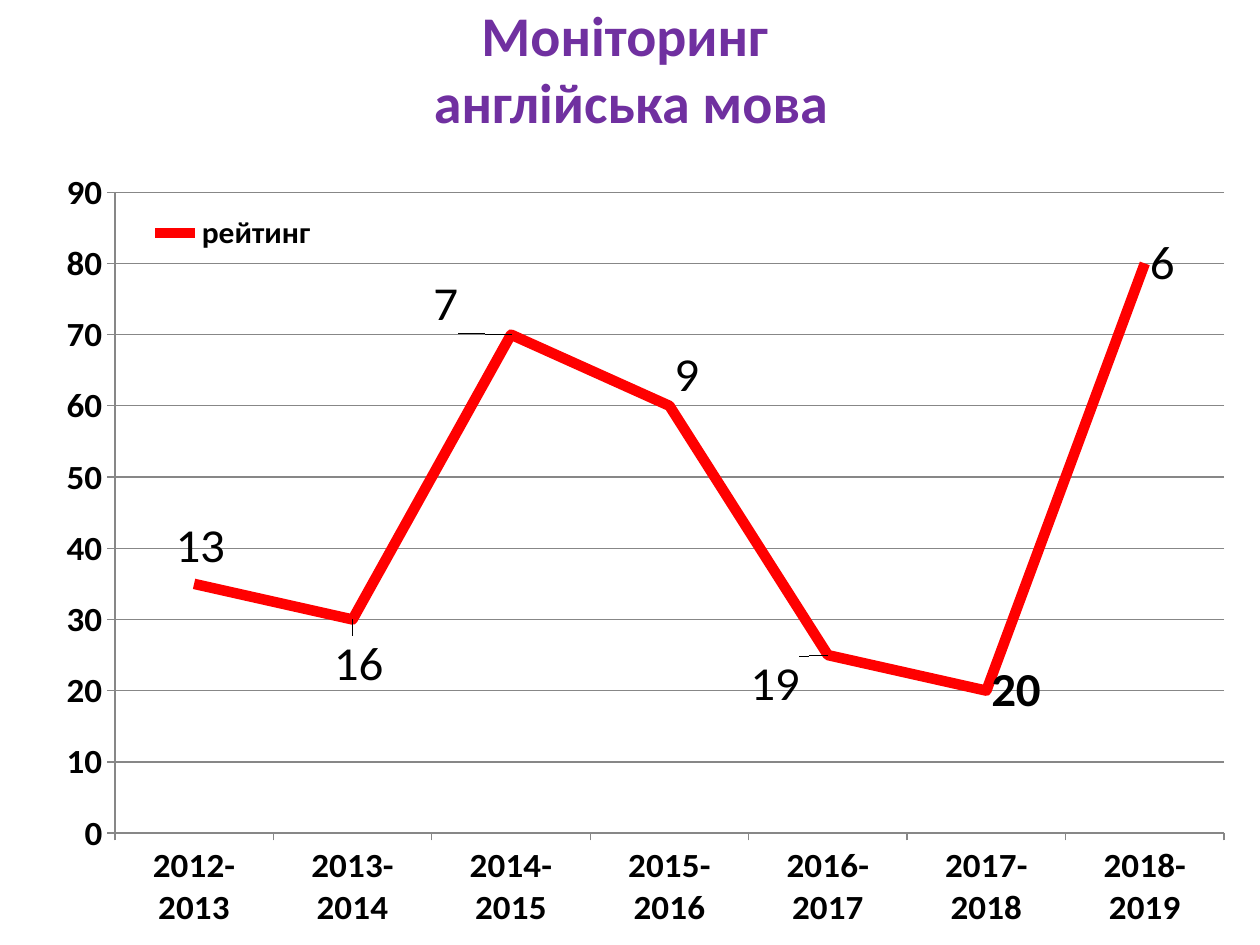
from lxml import etree
from pptx import Presentation
from pptx import util as u
from pptx.chart import data as chart_data
from pptx.dml.color import RGBColor
from pptx.enum import chart as chart_enum, text
from pptx.oxml import ns

PURPLE = RGBColor(0x70, 0x30, 0xA0)
RED = RGBColor(0xFF, 0x00, 0x00)
BLACK = RGBColor(0x00, 0x00, 0x00)
GRAY = RGBColor(0x87, 0x87, 0x87)
WHITE = RGBColor(0xFF, 0xFF, 0xFF)

YEARS = [f"{year}-{year + 1}" for year in range(2012, 2019)]
SCORES = [35, 30, 70, 60, 25, 20, 80]
RANKS = {
    0: ("13", -0.02, -0.05),
    1: ("16", -0.02, 0.06),
    2: ("7", -0.07, -0.04),
    3: ("9", 0, -0.04),
    4: ("19", -0.07, 0.04),
    6: ("6", 0, 0),
}


class SlideBuilder:
    """Holds the deck style and the current slide."""

    font_name = "Calibri"

    def __init__(self, presentation):
        self.slide = presentation.slides.add_slide(presentation.slide_layouts[5])

    def apply(self, target, values):
        for name, value in values.items():
            setattr(target, name, value)

    def style_font(self, font, size, bold, color=BLACK):
        self.apply(font, {"name": self.font_name, "size": u.Pt(size), "bold": bold})
        font.color.rgb = color

    def style_line(self, line, color, width):
        line.color.rgb = color
        line.width = u.Pt(width)

    def layout(self, **values):
        layout = etree.Element(ns.qn("c:layout"))
        manual = etree.SubElement(layout, ns.qn("c:manualLayout"))
        for name, value in values.items():
            etree.SubElement(manual, ns.qn(f"c:{name}")).set("val", str(value))
        return layout

    def title(self, wording, left, top, width, height):
        shape = self.slide.shapes.title
        self.apply(shape, {"left": u.Inches(left), "top": u.Inches(top),
                           "width": u.Inches(width), "height": u.Inches(height)})
        frame = shape.text_frame
        self.apply(frame, {"text": wording, "word_wrap": True,
                           "auto_size": text.MSO_AUTO_SIZE.NONE,
                           "vertical_anchor": text.MSO_ANCHOR.MIDDLE})
        for paragraph in frame.paragraphs:
            paragraph.alignment = text.PP_ALIGN.CENTER
            for run in paragraph.runs:
                self.style_font(run.font, 32, True, PURPLE)

    def line_chart(self, name, categories, values, left, top, width, height):
        content = chart_data.CategoryChartData()
        content.categories = categories
        content.add_series(name, values)
        chart = self.slide.shapes.add_chart(
            chart_enum.XL_CHART_TYPE.LINE, u.Inches(left), u.Inches(top),
            u.Inches(width), u.Inches(height), content).chart
        self.style_font(chart.font, 18, False)
        self.apply(chart, {"has_title": False, "has_legend": True})
        chart.plots[0].vary_by_categories = False
        self.plot_area(chart)
        self.axes(chart)
        self.legend(chart.legend)
        series = chart.plots[0].series[0]
        series.smooth = False
        series.marker.style = chart_enum.XL_MARKER_STYLE.NONE
        self.style_line(series.format.line, RED, 6)
        return series

    def plot_area(self, chart):
        area = chart._chartSpace.chart.plotArea
        for old in area.findall(ns.qn("c:layout")):
            area.remove(old)
        area.insert(0, self.layout(layoutTarget="inner", xMode="edge", yMode="edge",
                                   x=0.06, y=0.05, w=0.94, h=0.86))
        properties = etree.SubElement(area, ns.qn("c:spPr"))
        fill = etree.SubElement(properties, ns.qn("a:solidFill"))
        etree.SubElement(fill, ns.qn("a:srgbClr")).set("val", str(WHITE))

    def axes(self, chart):
        for axis in (chart.category_axis, chart.value_axis):
            axis.major_tick_mark = chart_enum.XL_TICK_MARK.OUTSIDE
            self.style_font(axis.tick_labels.font, 20, True)
            self.style_line(axis.format.line, GRAY, 0.75)
        self.apply(chart.value_axis, {"minimum_scale": 0, "maximum_scale": 90,
                                      "major_unit": 10, "has_major_gridlines": True})
        self.style_line(chart.value_axis.major_gridlines.format.line, GRAY, 0.75)

    def legend(self, legend):
        self.apply(legend, {"position": chart_enum.XL_LEGEND_POSITION.RIGHT,
                            "include_in_layout": False})
        self.style_font(legend.font, 18, True)
        for old in legend._element.findall(ns.qn("c:layout")):
            legend._element.remove(old)
        position = legend._element.find(ns.qn("c:legendPos"))
        position.addnext(self.layout(xMode="edge", yMode="edge",
                                     x=0.08, y=0.08, w=0.16, h=0.05))

    def point_labels(self, series, ranks):
        labels = series.data_labels
        right = chart_enum.XL_LABEL_POSITION.RIGHT
        self.apply(labels, {"show_value": True, "position": right})
        self.style_font(labels.font, 28, True)
        for index, (wording, x, y) in ranks.items():
            label = series.points[index].data_label
            label.text_frame.text = wording
            self.style_font(label.text_frame.paragraphs[0].runs[0].font, 28, False)
            label.position = right
            element = series._element.xpath(f".//c:dLbl[c:idx/@val='{index}']")[0]
            element.find(ns.qn("c:idx")).addnext(self.layout(x=x, y=y))


def main():
    presentation = Presentation()
    presentation.slide_width = u.Inches(10)
    presentation.slide_height = u.Inches(7.5)
    builder = SlideBuilder(presentation)
    builder.title("Моніторинг \vанглійська мова", 0.51, 0.19, 9, 0.69)
    series = builder.line_chart("рейтинг", YEARS, SCORES, 0.35, 1.23, 9.37, 6.14)
    builder.point_labels(series, RANKS)
    presentation.save("out.pptx")


if __name__ == "__main__":
    main()
